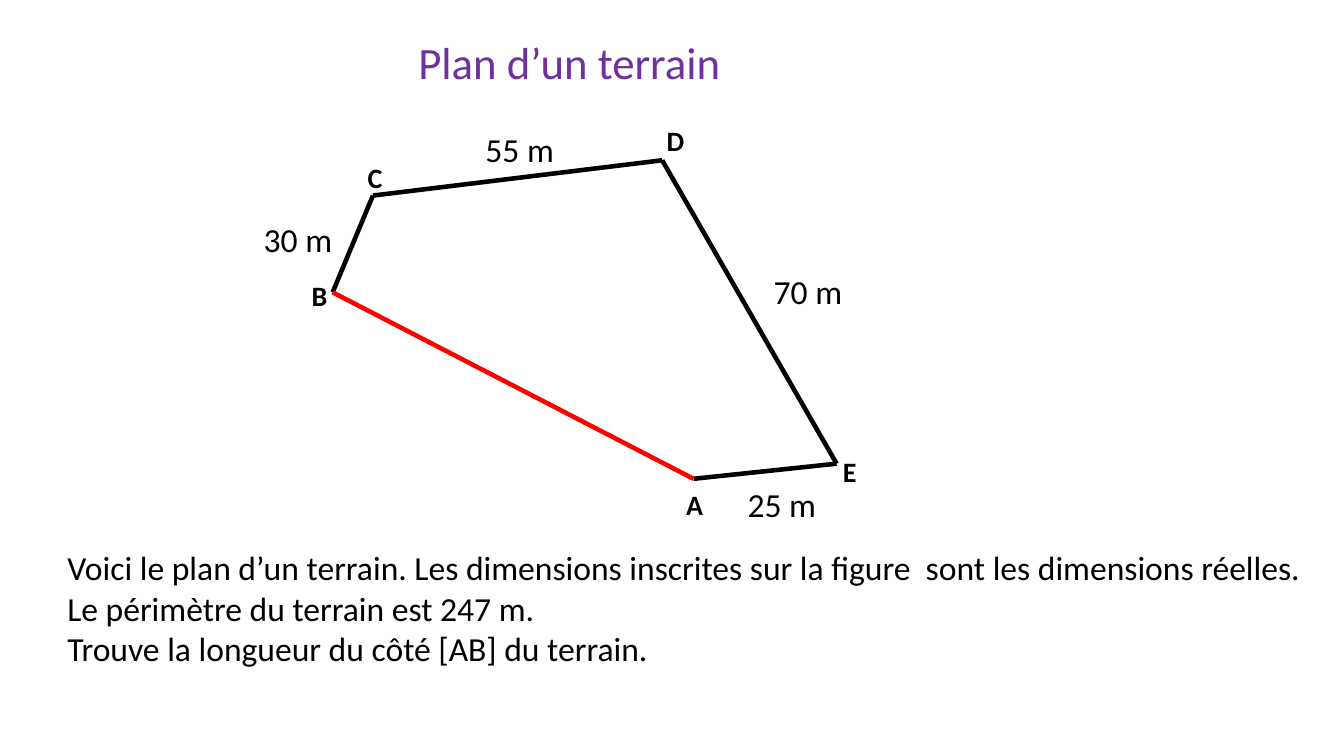
"""Build the slide showing the plan of a five-sided plot of land."""
from lxml import etree
from pptx import Presentation
from pptx.dml.color import RGBColor
from pptx.enum import shapes, text
from pptx.oxml import ns
from pptx.util import Pt

FONT = "Calibri"
BLACK, RED, PURPLE = "000000", "FF0000", "7030A0"
CENTER, LEFT = text.PP_ALIGN.CENTER, text.PP_ALIGN.LEFT

TITLE = "Plan d’un terrain"
QUESTION = [
    "Voici le plan d’un terrain. Les dimensions inscrites sur la figure  sont les dimensions réelles.",
    "Le périmètre du terrain est 247 m.",
    "Trouve la longueur du côté [AB] du terrain.",
]
CORNERS = {
    "B": (237.6, 208.8),
    "C": (266.4, 139.7),
    "D": (473, 114.5),
    "E": (597.6, 331.2),
    "A": (495.4, 342),
}
SIDES = [("BC", BLACK), ("CD", BLACK), ("DE", BLACK), ("EA", BLACK), ("AB", RED)]
LENGTHS = [
    ("55 m", 371.2, 88.6),
    ("70 m", 577.1, 190.1),
    ("25 m", 558.4, 342),
    ("30 m", 212.8, 152.6),
]
CORNER_LABELS = [
    ("C", 267.8, 110.9),
    ("D", 482.4, 85),
    ("E", 607, 321.1),
    ("A", 496.1, 344.9),
    ("B", 228.2, 195.1),
]


def color(value):
    return RGBColor.from_string(value)


def add_text(slide, lines, left, top, width, height, size, align=CENTER, ink=BLACK, bold=False):
    box = slide.shapes.add_textbox(Pt(left), Pt(top), Pt(width), Pt(height))
    frame = box.text_frame
    frame.word_wrap = True
    frame.auto_size = text.MSO_AUTO_SIZE.SHAPE_TO_FIT_TEXT
    for index, line in enumerate(lines):
        paragraph = frame.add_paragraph() if index else frame.paragraphs[0]
        paragraph.alignment = align
        run = paragraph.add_run()
        run.text = line
        run.font.name = FONT
        run.font.size = Pt(size)
        run.font.bold = bold
        run.font.color.rgb = color(ink)


def add_side(slide, start, end, ink):
    points = [Pt(value) for value in (*start, *end)]
    side = slide.shapes.add_connector(shapes.MSO_CONNECTOR.STRAIGHT, *points)
    side.line.color.rgb = color(ink)
    side.line.width = Pt(3.25)
    etree.SubElement(side.element.spPr, ns.qn("a:effectLst"))


def add_label(slide, label, center, top, width, height, size, bold=False):
    add_text(slide, [label], center - width / 2, top, width, height, size, bold=bold)


def main():
    presentation = Presentation()
    presentation.slide_width, presentation.slide_height = Pt(960), Pt(540)
    slide = presentation.slides.add_slide(presentation.slide_layouts[6])
    add_text(slide, [TITLE], 158.4, 21.6, 496.8, 46.1, 32, ink=PURPLE)
    for (start, end), ink in SIDES:
        add_side(slide, CORNERS[start], CORNERS[end], ink)
    for label, center, top in LENGTHS:
        add_label(slide, label, center, top, 84, 36, 24)
    for label, center, top in CORNER_LABELS:
        add_label(slide, label, center, top, 62, 31.7, 20, bold=True)
    add_text(slide, QUESTION, 41, 387.4, 910.8, 94.3, 24, align=LEFT)
    presentation.save("out.pptx")


if __name__ == "__main__":
    main()
